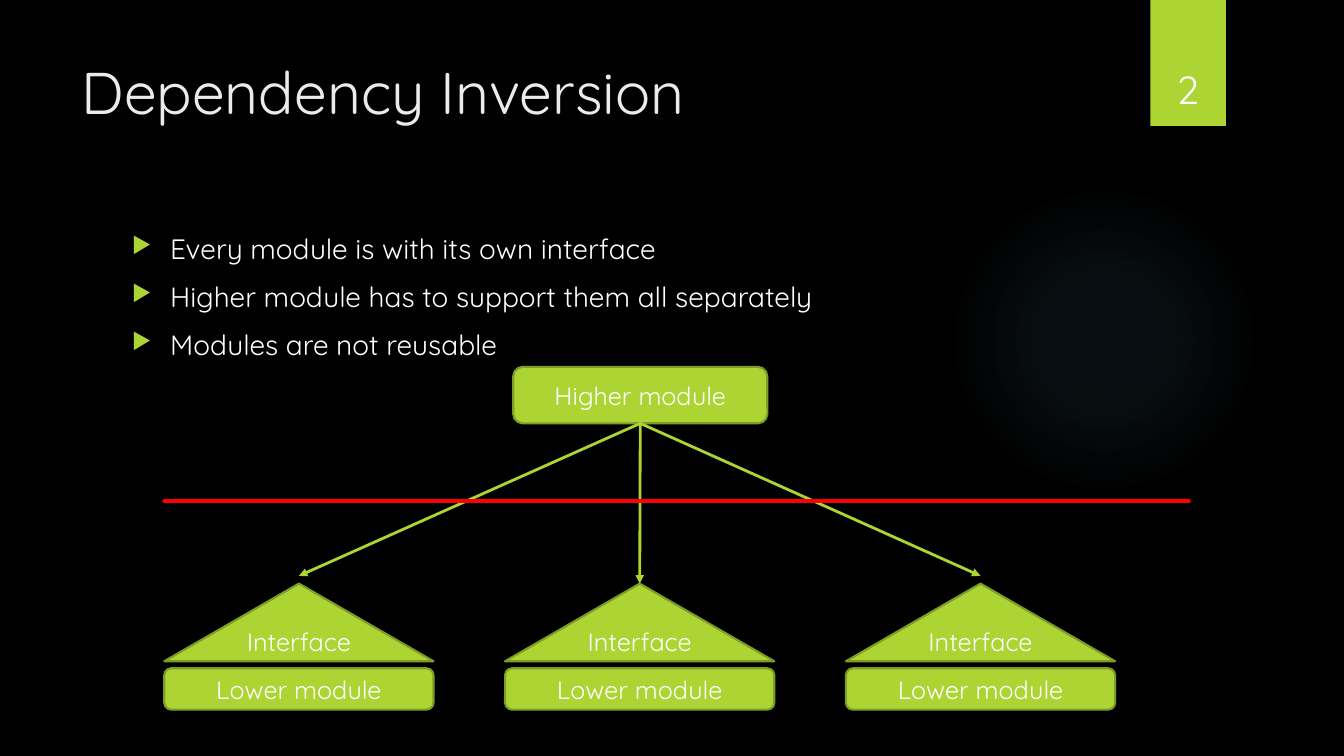
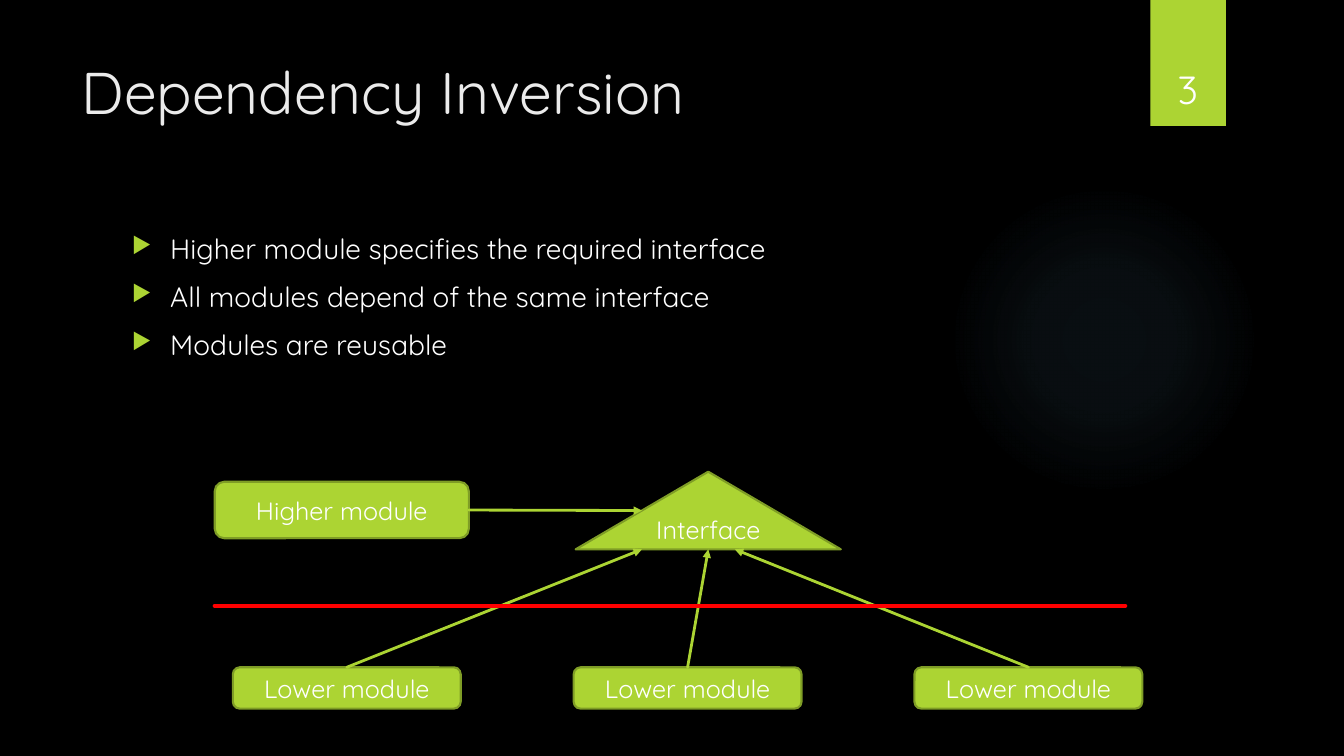
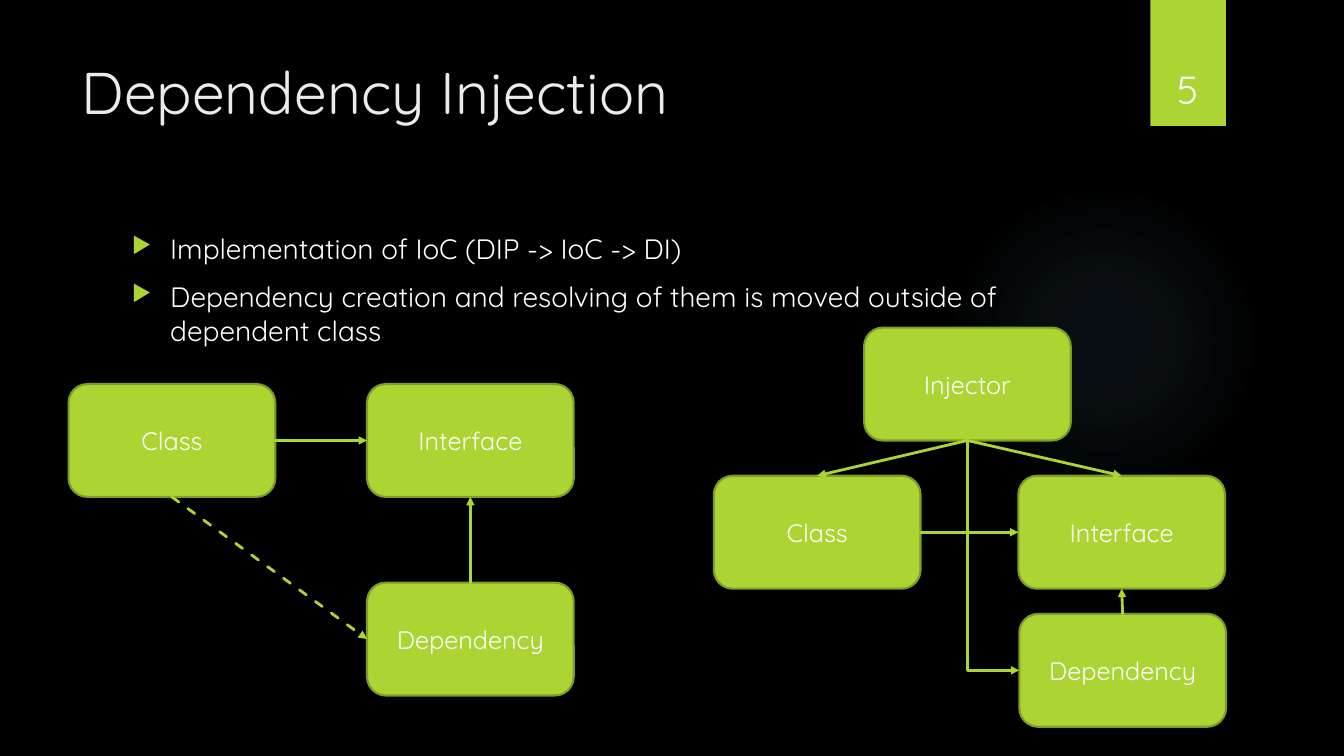
from dataclasses import dataclass
from lxml.etree import SubElement
from pptx import Presentation
from pptx.dml.color import RGBColor
from pptx.enum.dml import MSO_LINE
from pptx.enum.shapes import MSO_CONNECTOR, MSO_SHAPE
from pptx.enum.text import MSO_ANCHOR, PP_ALIGN
from pptx.oxml.ns import qn
from pptx.util import Inches, Pt


@dataclass(frozen=True)
class Theme:
    font: str = "Quicksand"
    back: str = "000000"
    accent: str = "ACD433"
    edge: str = "7F9D26"
    glow: str = "7AC4F0"
    barrier: str = "FF0000"
    title: str = "EBEBEB"
    text: str = "FFFFFF"
    title_size: int = 42
    number_size: int = 28
    body_size: int = 20
    node_size: int = 18
    edge_width: float = 1.5
    arrow_width: int = 2
    barrier_width: int = 3


THEME = Theme()
SLIDE_SIZE = 13.33, 7.5
TITLE_BOX = 0.71, 0.5, 10.29, 1.53
BODY_BOX = 1.21, 2.25, 9.78, 4.59
NUMBER_BOX = 11.32, 0.32, 0.92, 0.84
BAND_BOX = 11.41, 0, 0.75, 1.25
GLOW_BOX = 9.41, 1.83, 3.08, 3.08
GLOW_STOPS = (0, 7), (36, 6), (69, 0)

ROUND = MSO_SHAPE.ROUNDED_RECTANGLE
TRIANGLE = MSO_SHAPE.ISOSCELES_TRIANGLE
COLUMN_STEP = 3.38
CARD = 2.05, 1.12
HIGHER = 2.52, 0.56

ANCHORS = {
    "top": (0.5, 0), "bottom": (0.5, 1), "left": (0, 0.5), "right": (1, 0.5),
    "above": (0.5, -0.1), "slope": (0.25, 0.5),
    "base left": (0.25, 1), "base right": (0.6, 1),
}


def row_of(name, label, kind, left, top, width, height):
    return {f"{name} {i}": (label, kind, left + i * COLUMN_STEP, top, width, height)
            for i in range(3)}


def cards(side, places):
    return {f"{side} {label}": (label, ROUND, left, top, *CARD)
            for label, left, top in places}


SLIDES = [
    {
        "number": "2",
        "title": "Dependency Inversion",
        "bullets": ["Every module is with its own interface",
                    "Higher module has to support them all separately",
                    "Modules are not reusable"],
        "nodes": {
            "higher": ("Higher module", ROUND, 5.09, 3.64, *HIGHER),
            **row_of("lower", "Lower module", ROUND, 1.63, 6.63, 2.67, 0.41),
            **row_of("interface", "Interface", TRIANGLE, 1.63, 5.79, 2.67, 0.77),
        },
        "arrows": [("higher", "bottom", "interface 0", "above", "straight"),
                   ("higher", "bottom", "interface 1", "top", "straight"),
                   ("higher", "bottom", "interface 2", "above", "straight")],
        "barrier": (1.63, 11.79, 4.97),
    },
    {
        "number": "3",
        "title": "Dependency Inversion",
        "bullets": ["Higher module specifies the required interface",
                    "All modules depend of the same interface",
                    "Modules are reusable"],
        "nodes": {
            "higher": ("Higher module", ROUND, 2.13, 4.78, *HIGHER),
            "interface": ("Interface", TRIANGLE, 5.71, 4.68, 2.63, 0.77),
            **row_of("lower", "Lower module", ROUND, 2.31, 6.62, 2.26, 0.41),
        },
        "arrows": [("higher", "right", "interface", "slope", "straight"),
                   ("lower 0", "top", "interface", "base left", "straight"),
                   ("lower 1", "top", "interface", "bottom", "straight"),
                   ("lower 2", "top", "interface", "base right", "straight")],
        "barrier": (2.13, 11.16, 6.01),
    },
    {
        "number": "5",
        "title": "Dependency Injection",
        "bullets": ["Implementation of IoC (DIP -> IoC -> DI)",
                    "Dependency creation and resolving of them is moved "
                    "outside of dependent class"],
        "nodes": {
            **cards("plain", [("Class", 0.68, 3.81), ("Dependency", 3.64, 5.78),
                              ("Interface", 3.64, 3.81)]),
            **cards("injected", [("Injector", 8.57, 3.25), ("Class", 7.08, 4.72),
                                 ("Dependency", 10.11, 6.09), ("Interface", 10.1, 4.72)]),
        },
        "arrows": [
            ("plain Class", "right", "plain Interface", "left", "straight"),
            ("plain Dependency", "top", "plain Interface", "bottom", "straight"),
            ("plain Class", "bottom", "plain Dependency", "left", "dashed"),
            ("injected Injector", "bottom", "injected Class", "top", "straight"),
            ("injected Injector", "bottom", "injected Interface", "top", "straight"),
            ("injected Injector", "bottom", "injected Dependency", "left", "bent"),
            ("injected Class", "right", "injected Interface", "left", "straight"),
            ("injected Dependency", "top", "injected Interface", "bottom", "straight"),
        ],
    },
]


def color(code):
    return RGBColor.from_string(code)


def add_span(para, text, size, code=THEME.text):
    span = para.add_run()
    span.text = text
    span.font.name = THEME.font
    span.font.size = Pt(size)
    span.font.color.rgb = color(code)


def add_box(page, place, anchor=MSO_ANCHOR.TOP):
    frame = page.shapes.add_textbox(*map(Inches, place)).text_frame
    frame.word_wrap = True
    frame.vertical_anchor = anchor
    return frame


def add_solid(page, kind, place, fill=THEME.accent, edge=None):
    shape = page.shapes.add_shape(kind, *map(Inches, place))
    shape.shadow.inherit = False
    shape.fill.solid()
    shape.fill.fore_color.rgb = color(fill)
    if edge:
        shape.line.color.rgb = color(edge)
        shape.line.width = Pt(THEME.edge_width)
    else:
        shape.line.fill.background()
    return shape


def add_glow(page):
    glow = add_solid(page, MSO_SHAPE.OVAL, GLOW_BOX, THEME.glow)
    properties = glow.fill.fore_color and glow.element.spPr
    solid = properties.find(qn("a:solidFill"))
    gradient = SubElement(properties, qn("a:gradFill"), rotWithShape="1")
    properties.replace(solid, gradient)
    stops = SubElement(gradient, qn("a:gsLst"))
    for position, opacity in GLOW_STOPS:
        stop = SubElement(stops, qn("a:gs"), pos=str(position * 1000))
        tint = SubElement(stop, qn("a:srgbClr"), val=THEME.glow)
        SubElement(tint, qn("a:alpha"), val=str(opacity * 1000))
    circle = SubElement(gradient, qn("a:path"), path="circle")
    SubElement(circle, qn("a:fillToRect"), l="50000", t="50000", r="50000", b="50000")


def add_bullets(page, bullets):
    frame = add_box(page, BODY_BOX)
    for index, text in enumerate(bullets):
        para = frame.add_paragraph() if index else frame.paragraphs[0]
        settings = para._p.get_or_add_pPr()
        settings.set("marL", str(Inches(0.38)))
        settings.set("indent", str(-Inches(0.38)))
        tint = SubElement(settings, qn("a:buClr"))
        SubElement(tint, qn("a:srgbClr"), val=THEME.accent)
        SubElement(settings, qn("a:buSzPct"), val="80000")
        SubElement(settings, qn("a:buChar"), char="▶")
        para.space_before = Pt(10 if index else 0)
        add_span(para, text, THEME.body_size)


def add_line(page, start, end, code, width, kind=MSO_CONNECTOR.STRAIGHT):
    line = page.shapes.add_connector(kind, *map(Inches, (*start, *end)))
    line.line.color.rgb = color(code)
    line.line.width = Pt(width)
    line.line._get_or_add_ln().set("cap", "rnd")
    SubElement(line.element.spPr, qn("a:effectLst"))
    return line


def add_bent_line(page, start, end, code, width):
    (x1, y1), (x2, y2) = start, end
    middle_x, middle_y = (x1 + x2) / 2, (y1 + y2) / 2
    reach, rise = (y2 - y1) / 2, (x2 - x1) / 2
    line = add_line(page, (middle_x + reach, middle_y - rise),
                    (middle_x - reach, middle_y + rise), code, width, MSO_CONNECTOR.ELBOW)
    properties = line.element.spPr
    properties.find(qn("a:xfrm")).set("rot", str(270 * 60000))
    properties.find(qn("a:prstGeom")).set("prst", "bentConnector2")
    return line


def add_arrow(page, start, end, style):
    draw = add_bent_line if style == "bent" else add_line
    arrow = draw(page, start, end, THEME.accent, THEME.arrow_width)
    if style == "dashed":
        arrow.line.dash_style = MSO_LINE.DASH
    SubElement(arrow.line._get_or_add_ln(), qn("a:tailEnd"), type="triangle")


def add_node(page, label, kind, *place):
    frame = add_solid(page, kind, place, edge=THEME.edge).text_frame
    frame.word_wrap = True
    frame.vertical_anchor = MSO_ANCHOR.MIDDLE
    para = frame.paragraphs[0]
    para.alignment = PP_ALIGN.CENTER
    add_span(para, label, THEME.node_size)


def anchor_point(node, anchor):
    left, top, width, height = node[2:]
    across, down = ANCHORS[anchor]
    return left + across * width, top + down * height


def add_frame(page, title, number):
    add_glow(page)
    add_solid(page, MSO_SHAPE.RECTANGLE, BAND_BOX)
    add_span(add_box(page, TITLE_BOX).paragraphs[0], title, THEME.title_size, THEME.title)
    para = add_box(page, NUMBER_BOX, MSO_ANCHOR.BOTTOM).paragraphs[0]
    para.alignment = PP_ALIGN.CENTER
    add_span(para, number, THEME.number_size)


def build_page(deck, content):
    page = deck.slides.add_slide(deck.slide_layouts[6])
    add_frame(page, content["title"], content["number"])
    add_bullets(page, content["bullets"])
    nodes = content["nodes"]
    for node in nodes.values():
        add_node(page, *node)
    for source, leave, target, enter, style in content["arrows"]:
        add_arrow(page, anchor_point(nodes[source], leave),
                  anchor_point(nodes[target], enter), style)
    if "barrier" in content:
        left, right, level = content["barrier"]
        add_line(page, (left, level), (right, level), THEME.barrier, THEME.barrier_width)


def main():
    deck = Presentation()
    deck.slide_width, deck.slide_height = map(Inches, SLIDE_SIZE)
    backdrop = deck.slide_master.background.fill
    backdrop.solid()
    backdrop.fore_color.rgb = color(THEME.back)
    for content in SLIDES:
        build_page(deck, content)
    deck.save("out.pptx")


if __name__ == "__main__":
    main()
